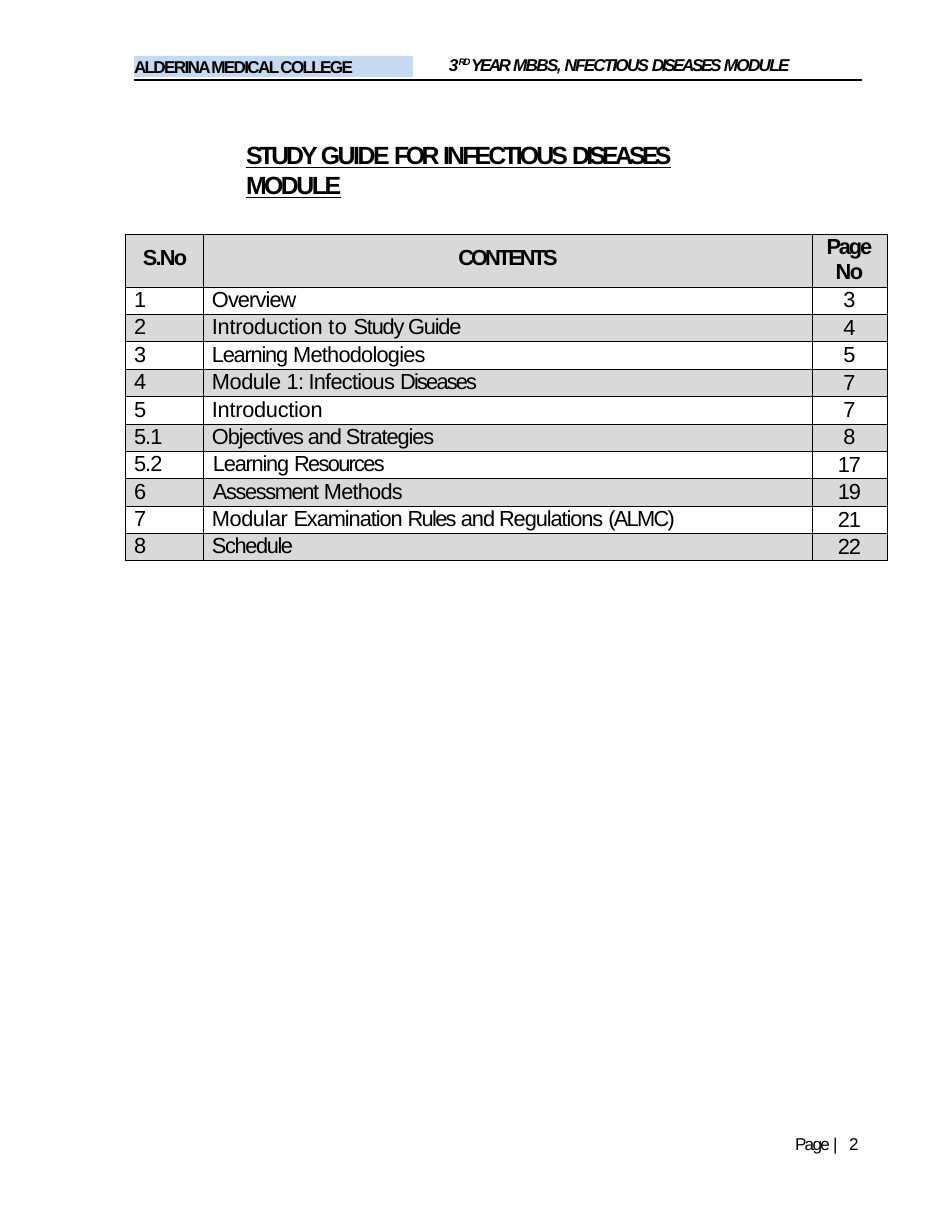
from lxml import etree
from pptx import Presentation
from pptx.dml.color import RGBColor
from pptx.enum.shapes import MSO_CONNECTOR, MSO_SHAPE
from pptx.enum.text import MSO_AUTO_SIZE, PP_ALIGN
from pptx.oxml.ns import qn
from pptx.util import Pt

LEFT, CENTER = PP_ALIGN.LEFT, PP_ALIGN.CENTER
RECT, STRAIGHT = MSO_SHAPE.RECTANGLE, MSO_CONNECTOR.STRAIGHT
GROW = MSO_AUTO_SIZE.SHAPE_TO_FIT_TEXT

BLACK = RGBColor(0x00, 0x00, 0x00)
GREY = RGBColor(0xD9, 0xD9, 0xD9)
BLUE = RGBColor(0xC5, 0xD9, 0xEF)

FONT = "Arial"
EMU_PER_PX = 914400 / 112
COLUMNS = [78, 609, 75]
TABLE_HEIGHT, HEADER_HEIGHT = 327, 53

# Runs are (text, letter spacing in points)
CONTENTS = [
    (("1", 0), [("Overview", -0.6)], ("3", 0)),
    (("2", 0), [("Introduction ", -0.2), ("to ", 0.2), ("Study Guide", -0.8)], ("4", 0)),
    (("3", 0), [("Learning ", -0.8), ("Methodologies", -0.5)], ("5", 0)),
    (("4", 0), [("Module ", -0.3), ("1: Infectious ", -0.5), ("Diseases", -1.2)], ("7", 0)),
    (("5", 0), [("Introduction", -0.2)], ("7", 0)),
    (("5.1", -0.6), [("Objectives and Strategies", -0.7)], ("8", 0)),
    (("5.2", -0.6), [("Learning ", -0.8), ("Resources", -1.1)], ("17", -0.7)),
    (("6", 0), [("Assessment ", -0.9), ("Methods", -0.5)], ("19", -0.7)),
    (("7", 0), [("Modular ", -0.3), ("Examination ", -0.7), ("Rules ", -1.1),
                ("and Regulations ", -0.7), ("(ALMC)", -1.1)], ("21", -0.8)),
    (("8", 0), [("Schedule", -0.9)], ("22", -0.8)),
]
INDENTED_ROWS = ("5.2", "6")


def px(n):
    return round(n * EMU_PER_PX)


def write(p, runs, size, bold=False, italic=False, underline=False,
          align=LEFT, indent=0, before=0, line=None):
    p.alignment = align
    p.space_before = Pt(before)
    if line:
        p.line_spacing = Pt(line)
    pPr = p._p.get_or_add_pPr()
    pPr.set("marL", str(px(indent)))
    pPr.set("indent", "0")
    for text, spacing in runs:
        r = p.add_run()
        r.text = text
        font = r.font
        font.name, font.size = FONT, Pt(size)
        font.bold, font.italic, font.underline = bold, italic, underline
        font.color.rgb = BLACK
        r._r.get_or_add_rPr().set("spc", str(round(spacing * 100)))


def set_margins(target, top=0):
    target.margin_left = target.margin_right = target.margin_bottom = 0
    target.margin_top = px(top)


def prepare_frame(sp, top=0):
    tf = sp.text_frame
    tf.word_wrap = True
    tf.auto_size = GROW
    set_margins(tf, top)
    return tf.paragraphs[0]


def add_text(slide, x, y, w, h, runs, size, top=0, **style):
    sp = slide.shapes.add_textbox(px(x), px(y), px(w), px(h))
    p = prepare_frame(sp, top)
    write(p, runs, size, indent=1, **style)
    return p


def add_band(slide, x, y, w, h, runs, size, **style):
    sp = slide.shapes.add_shape(RECT, px(x), px(y), px(w), px(h))
    sp.shadow.inherit = False
    sp.fill.solid()
    sp.fill.fore_color.rgb = BLUE
    sp.line.fill.background()
    write(prepare_frame(sp), runs, size, **style)


def add_rule(slide, x1, x2, y):
    line = slide.shapes.add_connector(STRAIGHT, px(x1), px(y), px(x2), px(y))
    line.line.color.rgb = BLACK
    line.line.width = Pt(0.75)
    etree.SubElement(line._element.spPr, qn("a:effectLst"))


def style_cell(cell, shaded, top=0):
    set_margins(cell, top)
    tcPr = cell._tc.get_or_add_tcPr()
    for side in ("lnL", "lnR", "lnT", "lnB"):
        ln = etree.SubElement(tcPr, qn(f"a:{side}"), w=str(Pt(0.5)))
        fill = etree.SubElement(ln, qn("a:solidFill"))
        etree.SubElement(fill, qn("a:srgbClr"), val=str(BLACK))
    if shaded:
        cell.fill.solid()
        cell.fill.fore_color.rgb = GREY
    else:
        cell.fill.background()


def add_contents_table(slide, x, y):
    frame = slide.shapes.add_table(len(CONTENTS) + 1, len(COLUMNS), px(x), px(y),
                                   px(sum(COLUMNS)), px(TABLE_HEIGHT))
    table = frame.table
    table.first_row = table.horz_banding = False
    for column, width in zip(table.columns, COLUMNS):
        column.width = px(width)
    for row in table.rows:
        row.height = px((TABLE_HEIGHT - HEADER_HEIGHT) / len(CONTENTS))
    table.rows[0].height = px(HEADER_HEIGHT)

    # Header row
    number, title, page = table.rows[0].cells
    style_cell(number, True, top=12)
    style_cell(title, True, top=12)
    style_cell(page, True)
    write(number.text_frame.paragraphs[0], [("S.No", -1.2)], 14, bold=True,
          indent=18, before=8.2)
    write(title.text_frame.paragraphs[0], [("CONTENTS", -1.9)], 14, bold=True,
          align=CENTER, indent=1, before=8.2)
    write(page.text_frame.paragraphs[0], [("Page", -1.4)], 14, bold=True,
          align=CENTER, line=16.2)
    write(page.text_frame.add_paragraph(), [("No", -1)], 14, bold=True,
          align=CENTER, before=0.3)

    # Content rows, every second one shaded
    for i, (number, title, page) in enumerate(CONTENTS):
        cells = table.rows[i + 1].cells
        title_indent = 10 if number[0] in INDENTED_ROWS else 9
        styles = [([number], dict(indent=9, line=16.2)),
                  (title, dict(indent=title_indent, line=16.2)),
                  ([page], dict(align=CENTER, line=16.5))]
        for cell, (runs, style) in zip(cells, styles):
            style_cell(cell, i % 2 == 1)
            write(cell.text_frame.paragraphs[0], runs, 14, **style)


def main():
    prs = Presentation()
    prs.slide_width, prs.slide_height = px(952), px(1232)
    s = prs.slides.add_slide(prs.slide_layouts[6])

    # Page header
    add_rule(s, 134, 862, 80)
    p = add_text(s, 448, 53, 433, 22,
                 [("3", -0.8), ("RD ", -1.2), ("YEAR ", -1.7), ("MBBS, ", -1.1),
                  ("NFECTIOUS ", -1.2), ("DISEASES ", -1.6), ("MODULE", -1.1)],
                 11, top=1, bold=True, italic=True, before=1)
    ordinal = p.runs[1]
    ordinal.font.size = Pt(10.5)
    ordinal._r.get_or_add_rPr().set("baseline", "32000")

    # Page footer
    add_text(s, 794, 1136, 72, 20, [("Page ", -1.1), ("| ", 2.2), ("2", -0.6)],
             11, line=11.5)

    # College name and title
    add_band(s, 134, 56, 279, 21, [("ALDERINA MEDICAL COLLEGE", -1.1)], 11,
             bold=True, line=12.9)
    add_text(s, 245, 139, 523, 32,
             [("STUDY ", -2), ("GUIDE ", -1.6), ("FOR ", -2.2), ("INFECTIOUS ", -1.8),
              ("DISEASES", -2.4), (" ", -3.1), ("MODULE", -1.6)],
             16, top=1, bold=True, underline=True, before=0.9)

    add_contents_table(s, 125, 234)
    prs.save("out.pptx")


if __name__ == "__main__":
    main()
